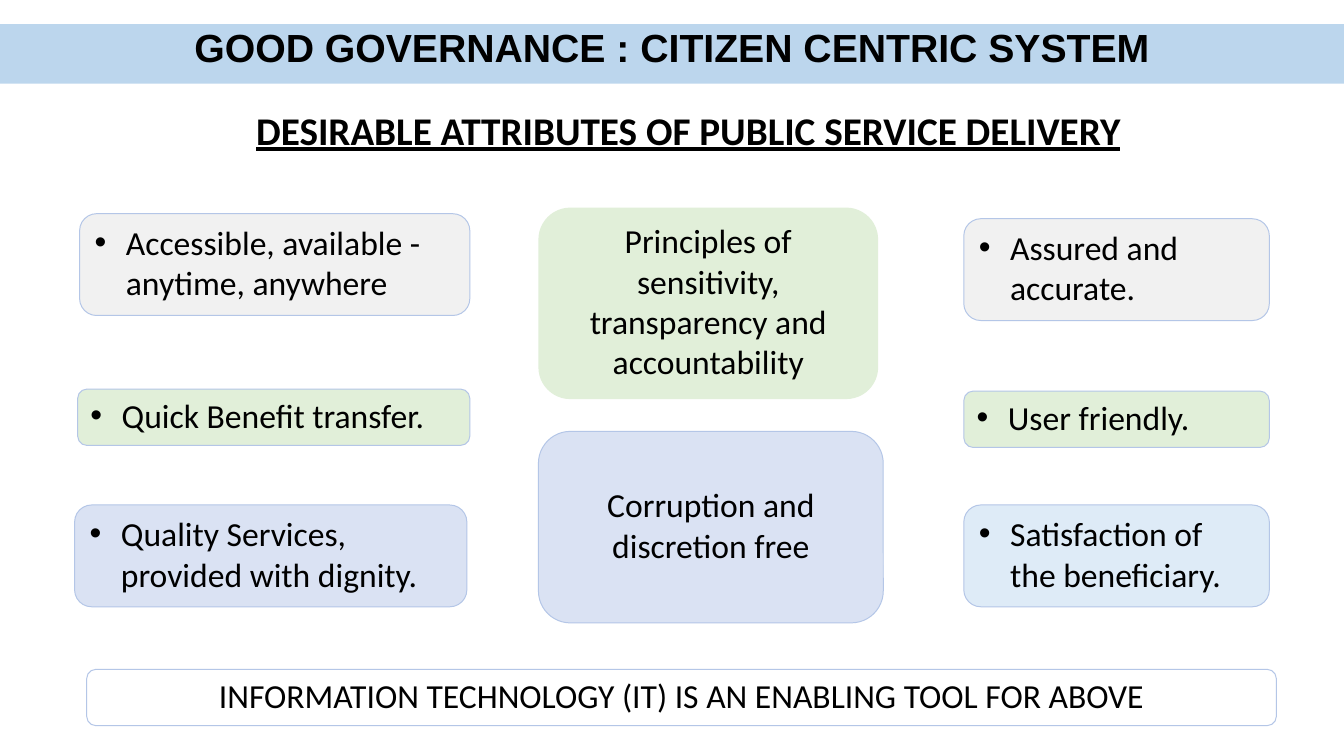
"""Build the slide on citizen-centric public service delivery."""
from lxml import etree
from pptx import Presentation
from pptx.dml.color import RGBColor
from pptx.enum import shapes, text
from pptx.oxml.ns import qn
from pptx.util import Inches, Pt

BLACK = RGBColor(0x00, 0x00, 0x00)
WHITE = RGBColor(0xFF, 0xFF, 0xFF)
BAND = RGBColor(0xBC, 0xD6, 0xED)
BORDER = RGBColor(0xB4, 0xC6, 0xE7)
GREEN = RGBColor(0xE1, 0xEF, 0xD9)
GREY = RGBColor(0xF1, 0xF1, 0xF1)
LAVENDER = RGBColor(0xDA, 0xE2, 0xF3)
SKY = RGBColor(0xDE, 0xEB, 0xF7)


def write(sp, words, size=24, font="Calibri", bold=False, underline=False,
          align=text.PP_ALIGN.CENTER, anchor=text.MSO_ANCHOR.MIDDLE,
          wrap=True, margins=(0, 0.01, 0, 0), bullet=False):
    tf = sp.text_frame
    tf.word_wrap = wrap
    tf.auto_size = text.MSO_AUTO_SIZE.NONE
    tf.vertical_anchor = anchor
    tf.margin_left, tf.margin_top, tf.margin_right, tf.margin_bottom = map(Inches, margins)
    p = tf.paragraphs[0]
    p.alignment = align
    p.line_spacing = 1.0
    p.space_before = Pt(1)
    if bullet:
        pPr = p._p.get_or_add_pPr()
        pPr.set("marL", str(Inches(0.33)))
        pPr.set("indent", str(Inches(-0.31)))
        etree.SubElement(pPr, qn("a:buFont")).set("typeface", "Arial")
        etree.SubElement(pPr, qn("a:buChar")).set("char", "•")
    r = p.add_run()
    r.text = words
    r.font.size = Pt(size)
    r.font.name = font
    r.font.bold = bold
    r.font.underline = underline
    r.font.color.rgb = BLACK


def add_box(kind, x, y, w, h, fill, border=None):
    sp = s.shapes.add_shape(kind, Inches(x), Inches(y), Inches(w), Inches(h))
    sp.shadow.inherit = False
    sp.fill.solid()
    sp.fill.fore_color.rgb = fill
    if border is None:
        sp.line.fill.background()
    else:
        sp.line.color.rgb = border
        sp.line.width = Pt(0.72)
    return sp


prs = Presentation()
prs.slide_width = Inches(13.33)
prs.slide_height = Inches(7.5)
s = prs.slides.add_slide(prs.slide_layouts[5])

title = s.shapes.title
title.left, title.top, title.width, title.height = map(Inches, (1.91, 0.22, 9.51, 0.49))
write(title, "GOOD GOVERNANCE : CITIZEN CENTRIC SYSTEM", size=28, font="Arial", bold=True,
      anchor=text.MSO_ANCHOR.TOP, wrap=False)
band = add_box(shapes.MSO_SHAPE.RECTANGLE, 0, 0.24, 13.33, 0.59, BAND)
title._element.addprevious(band._element)

subtitle = s.shapes.add_textbox(Inches(2.54), Inches(1.04), Inches(8.62), Inches(0.49))
write(subtitle, "DESIRABLE ATTRIBUTES OF PUBLIC SERVICE DELIVERY", size=28, bold=True,
      underline=True, align=text.PP_ALIGN.LEFT, anchor=text.MSO_ANCHOR.TOP, wrap=False)

ROUNDED = shapes.MSO_SHAPE.ROUNDED_RECTANGLE
attributes = [
    (0.79, 2.12, 3.87, 1.01, GREY, "Accessible, available - anytime, anywhere"),
    (0.77, 3.86, 3.89, 0.56, GREEN, "Quick Benefit transfer."),
    (0.74, 5.01, 3.89, 1.01, LAVENDER, "Quality Services, provided with dignity."),
    (9.56, 2.17, 3.03, 1.01, GREY, "Assured and accurate."),
    (9.56, 3.88, 3.03, 0.56, GREEN, "User friendly."),
    (9.56, 5.01, 3.03, 1.01, SKY, "Satisfaction of the beneficiary."),
]
for x, y, w, h, fill, words in attributes:
    write(add_box(ROUNDED, x, y, w, h, fill, BORDER), words, align=text.PP_ALIGN.LEFT,
          margins=(0.08, 0, 0.35, 0.05), bullet=True)

statements = [
    (5.34, 2.06, 3.37, 1.9, GREEN, None,
     "Principles of sensitivity, transparency and accountability"),
    (5.34, 4.28, 3.42, 1.9, LAVENDER, BORDER, "Corruption and discretion free"),
    (0.86, 6.64, 11.8, 0.56, WHITE, BORDER,
     "INFORMATION TECHNOLOGY (IT) IS AN ENABLING TOOL FOR ABOVE"),
]
for x, y, w, h, fill, border, words in statements:
    write(add_box(ROUNDED, x, y, w, h, fill, border), words, margins=(0.3, 0, 0.3, 0.05))

prs.save("out.pptx")
